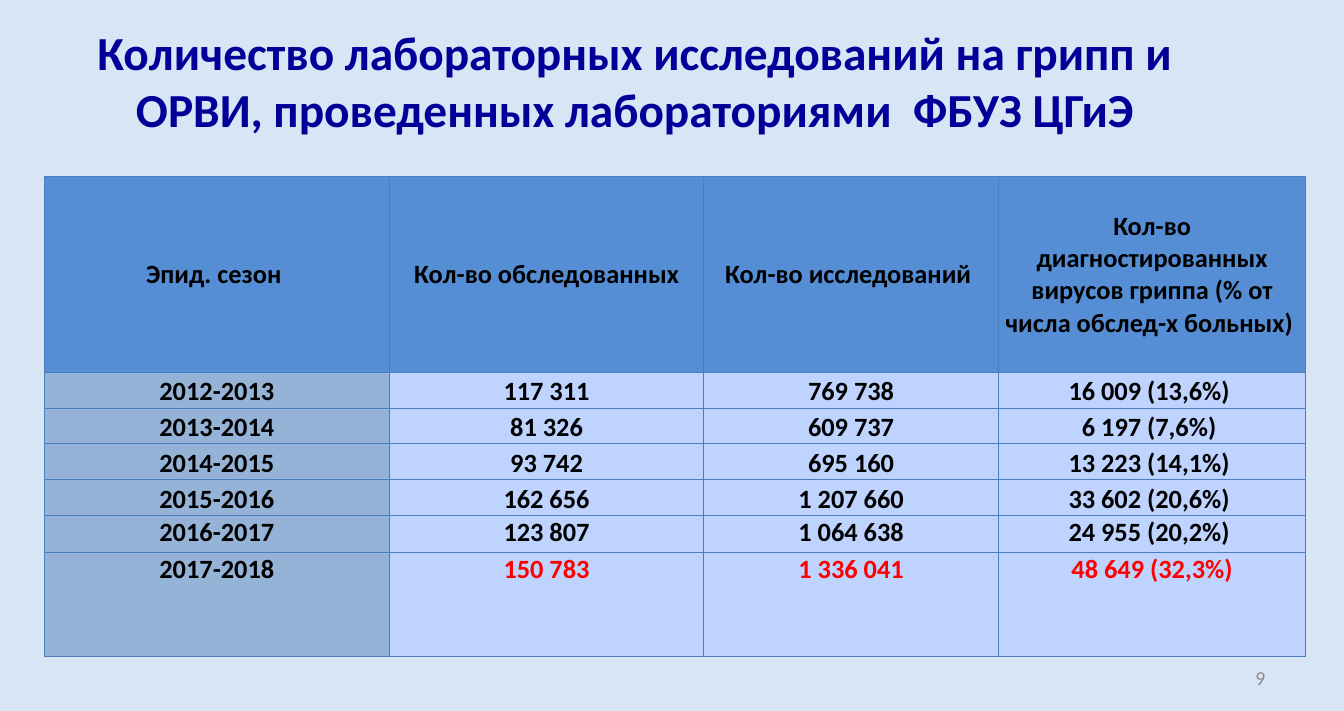
from lxml import etree
from pptx import Presentation
from pptx.dml.color import RGBColor
from pptx.enum import text as t
from pptx.oxml import ns
from pptx.util import Pt

NAVY = RGBColor(0x00, 0x00, 0x99)
BLACK = RGBColor(0x00, 0x00, 0x00)
RED = RGBColor(0xFF, 0x00, 0x00)
GREY = RGBColor(0x8C, 0x8C, 0x8C)
PALE = RGBColor(0xD8, 0xE5, 0xF4)
HEAD = RGBColor(0x55, 0x8E, 0xD5)
SEASON = RGBColor(0x95, 0xB3, 0xD7)
BODY = RGBColor(0xBF, 0xD3, 0xFF)
EDGE = RGBColor(0x4B, 0x7E, 0xBC)


def style(frame, size, color, bold, align):
    for par in frame.paragraphs:
        par.alignment = align
        for run in par.runs:
            font = run.font
            font.name, font.size, font.bold = "Calibri", Pt(size), bold
            font.color.rgb = color


def border(cell):
    props = cell._tc.get_or_add_tcPr()
    for side in ("a:lnL", "a:lnR", "a:lnT", "a:lnB"):
        line = etree.SubElement(props, ns.qn(side), w=str(Pt(0.75)))
        fill = etree.SubElement(line, ns.qn("a:solidFill"))
        etree.SubElement(fill, ns.qn("a:srgbClr"), val=str(EDGE))


# Slide and background
deck = Presentation()
deck.slide_width, deck.slide_height = Pt(1021), Pt(540)
slide = deck.slides.add_slide(deck.slide_layouts[5])
slide.background.fill.solid()
slide.background.fill.fore_color.rgb = PALE

# Title
title = slide.shapes.title
title.left, title.top, title.width, title.height = Pt(23), Pt(0), Pt(919), Pt(122)
frame = title.text_frame
frame.text = "Количество лабораторных исследований на грипп и ОРВИ, проведенных лабораториями  ФБУЗ ЦГиЭ"
frame.word_wrap = True
frame.auto_size = t.MSO_AUTO_SIZE.NONE
frame.vertical_anchor = t.MSO_ANCHOR.MIDDLE
style(frame, 36, NAVY, True, t.PP_ALIGN.CENTER)

# Slide number
box = slide.shapes.add_textbox(Pt(731.5), Pt(500.4), Pt(238.3), Pt(28.8))
frame = box.text_frame
frame.text = "9"
frame.word_wrap = True
frame.vertical_anchor = t.MSO_ANCHOR.MIDDLE
frame.margin_left = frame.margin_right = Pt(8.6)
style(frame, 15, GREY, False, t.PP_ALIGN.RIGHT)

# Table of seasons
rows = [
    ("Эпид. сезон ", "Кол-во обследованных", "Кол-во исследований ",
     "Кол-во диагностированных вирусов гриппа (% от числа обслед-х больных) "),
    ("2012-2013", "117 311", "769 738", "16 009 (13,6%) "),
    ("2013-2014", "81 326", "609 737", "6 197 (7,6%) "),
    ("2014-2015", "93 742", "695 160", "13 223 (14,1%) "),
    ("2015-2016", "162 656", "1 207 660", "33 602 (20,6%) "),
    ("2016-2017", "123 807", "1 064 638", "24 955 (20,2%) "),
    ("2017-2018", "150 783", "1 336 041", "48 649 (32,3%)"),
]
widths = [262.4, 238.6, 224.1, 233.3]
heights = [148.8] + [27.2] * 4 + [28, 79.2]
last = len(rows) - 1
table = slide.shapes.add_table(
    len(rows), len(widths), Pt(33.6), Pt(133.9), Pt(sum(widths)), Pt(sum(heights))).table
for col, width in zip(table.columns, widths):
    col.width = Pt(width)
for row, height in zip(table.rows, heights):
    row.height = Pt(height)

for r, row in enumerate(rows):
    if r == 0:
        anchor = t.MSO_ANCHOR.MIDDLE
    else:
        anchor = t.MSO_ANCHOR.BOTTOM if r < 5 else t.MSO_ANCHOR.TOP
    for c, words in enumerate(row):
        cell = table.cell(r, c)
        cell.text = words
        cell.vertical_anchor = anchor
        cell.margin_left = cell.margin_right = cell.margin_top = Pt(0.72)
        cell.margin_bottom = Pt(0)
        border(cell)
        cell.fill.solid()
        cell.fill.fore_color.rgb = HEAD if r == 0 else SEASON if c == 0 else BODY
        color = RED if r == last and c > 0 else BLACK
        style(cell.text_frame, 20, color, True, t.PP_ALIGN.CENTER)

deck.save("out.pptx")
